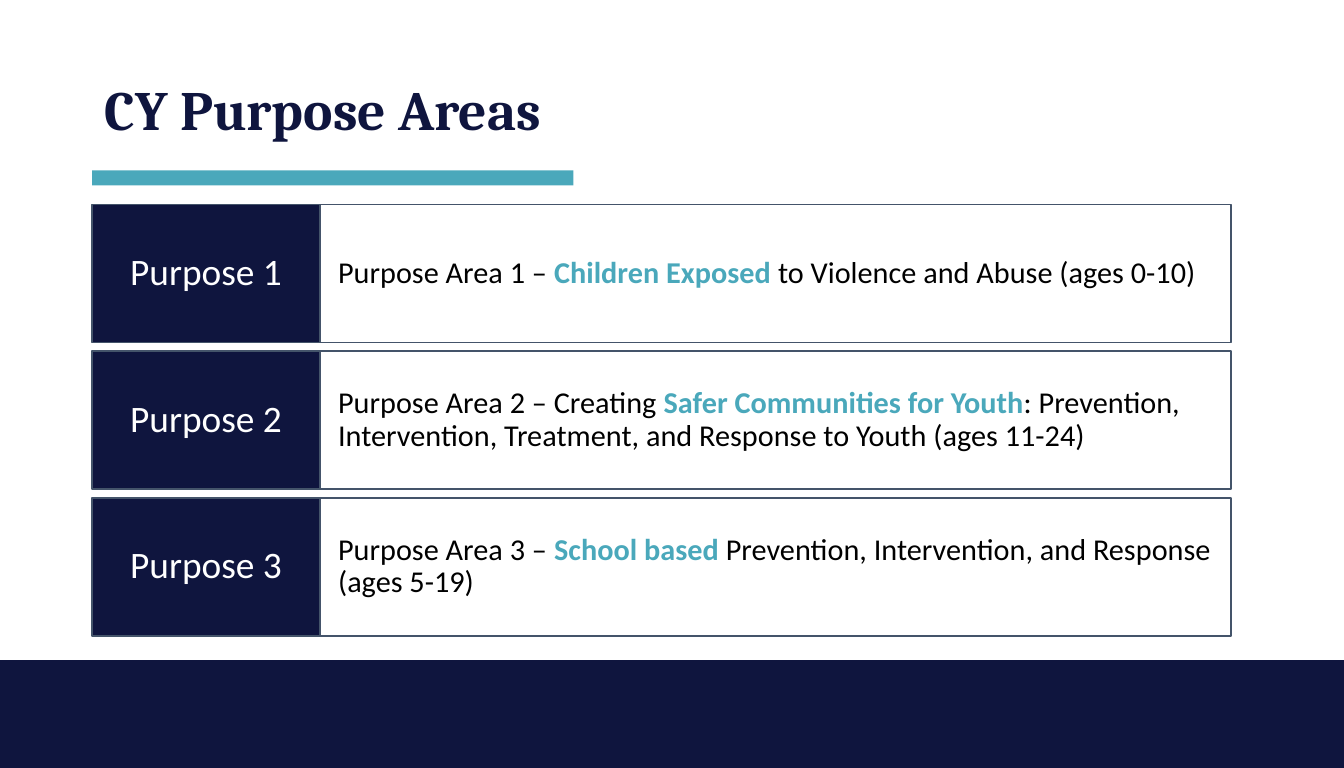
from pptx import Presentation
from pptx.dml.color import RGBColor
from pptx.enum.shapes import MSO_SHAPE
from pptx.enum.text import MSO_ANCHOR, PP_ALIGN
from pptx.util import Cm, Pt

COLORS = {
    "navy": "0F153E",
    "teal": "4AA8BB",
    "slate": "44546A",
    "black": "000000",
    "white": "FFFFFF",
}

# Layout in centimetres
SLIDE_WIDTH, SLIDE_HEIGHT = 26.67, 15.24
LEFT = 1.83
LABEL_WIDTH, DETAIL_WIDTH = 4.52, 18.08
ROWS_TOP, ROW_HEIGHT, ROW_PITCH = 4.06, 2.74, 2.91
FOOTER_TOP = 13.1

PURPOSES = [
    ("Purpose Area 1 – ", "Children Exposed ",
     "to Violence and Abuse (ages 0-10)"),
    ("Purpose Area 2 – Creating ", "Safer Communities for Youth",
     ": Prevention, Intervention, Treatment, and Response to Youth (ages 11-24)"),
    ("Purpose Area 3 –", " School based ",
     "Prevention, Intervention, and Response (ages 5-19)"),
]


class SlideBuilder:
    """Holds the style and the slide being built."""

    heading_font = "Cambria"
    body_font = "Calibri"
    line_spacing = 0.9

    def __init__(self, slide):
        self.slide = slide

    def color(self, name):
        return RGBColor.from_string(COLORS[name])

    def box(self, left, top, width, height, fill=None, line=None):
        rect = self.slide.shapes.add_shape(
            MSO_SHAPE.RECTANGLE, Cm(left), Cm(top), Cm(width), Cm(height))
        rect.shadow.inherit = False
        if fill:
            rect.fill.solid()
            rect.fill.fore_color.rgb = self.color(fill)
        else:
            rect.fill.background()
        if line:
            rect.line.color.rgb = self.color(line)
            rect.line.width = Pt(1)
        else:
            rect.line.fill.background()
        return rect

    def add_text(self, shape, runs, size, font, align=PP_ALIGN.LEFT,
                 inset=(0.25, 0.13)):
        """Fill a shape with one paragraph of (text, colour, bold) runs."""
        frame = shape.text_frame
        frame.word_wrap = True
        frame.vertical_anchor = MSO_ANCHOR.MIDDLE
        frame.margin_left = frame.margin_right = Cm(inset[0])
        frame.margin_top = frame.margin_bottom = Cm(inset[1])
        paragraph = frame.paragraphs[0]
        paragraph.alignment = align
        paragraph.line_spacing = self.line_spacing
        for text, color, bold in runs:
            run = paragraph.add_run()
            run.text = text
            run.font.name = font
            run.font.size = Pt(size)
            run.font.bold = bold
            run.font.color.rgb = self.color(color)

    def title(self, text, left, top, width, height):
        heading = self.slide.shapes.add_textbox(
            Cm(left), Cm(top), Cm(width), Cm(height))
        self.add_text(heading, [(text, "navy", True)], 31.2, self.heading_font)

    def purpose_row(self, top, label, before, emphasis, after):
        detail = self.box(LEFT + LABEL_WIDTH, top, DETAIL_WIDTH, ROW_HEIGHT,
                          line="slate")
        self.add_text(detail,
                      [(before, "black", False), (emphasis, "teal", True),
                       (after, "black", False)],
                      17, self.body_font, inset=(0.36, 0.71))
        tag = self.box(LEFT, top, LABEL_WIDTH, ROW_HEIGHT, "navy", "slate")
        self.add_text(tag, [(label, "white", False)], 21, self.body_font,
                      PP_ALIGN.CENTER, (0.23, 0.28))


def main():
    deck = Presentation()
    deck.slide_width, deck.slide_height = Cm(SLIDE_WIDTH), Cm(SLIDE_HEIGHT)
    builder = SlideBuilder(deck.slides.add_slide(deck.slide_layouts[6]))

    # Accent bar and footer band
    builder.box(LEFT, 3.38, 9.55, 0.3, "teal")
    builder.box(0, FOOTER_TOP, SLIDE_WIDTH, SLIDE_HEIGHT - FOOTER_TOP, "navy")

    # Title
    builder.title("CY Purpose Areas", LEFT, 1.45, 23, 1.55)

    # One row per purpose area
    for index, description in enumerate(PURPOSES):
        builder.purpose_row(ROWS_TOP + index * ROW_PITCH,
                            f"Purpose {index + 1}", *description)

    deck.save("out.pptx")


if __name__ == "__main__":
    main()
